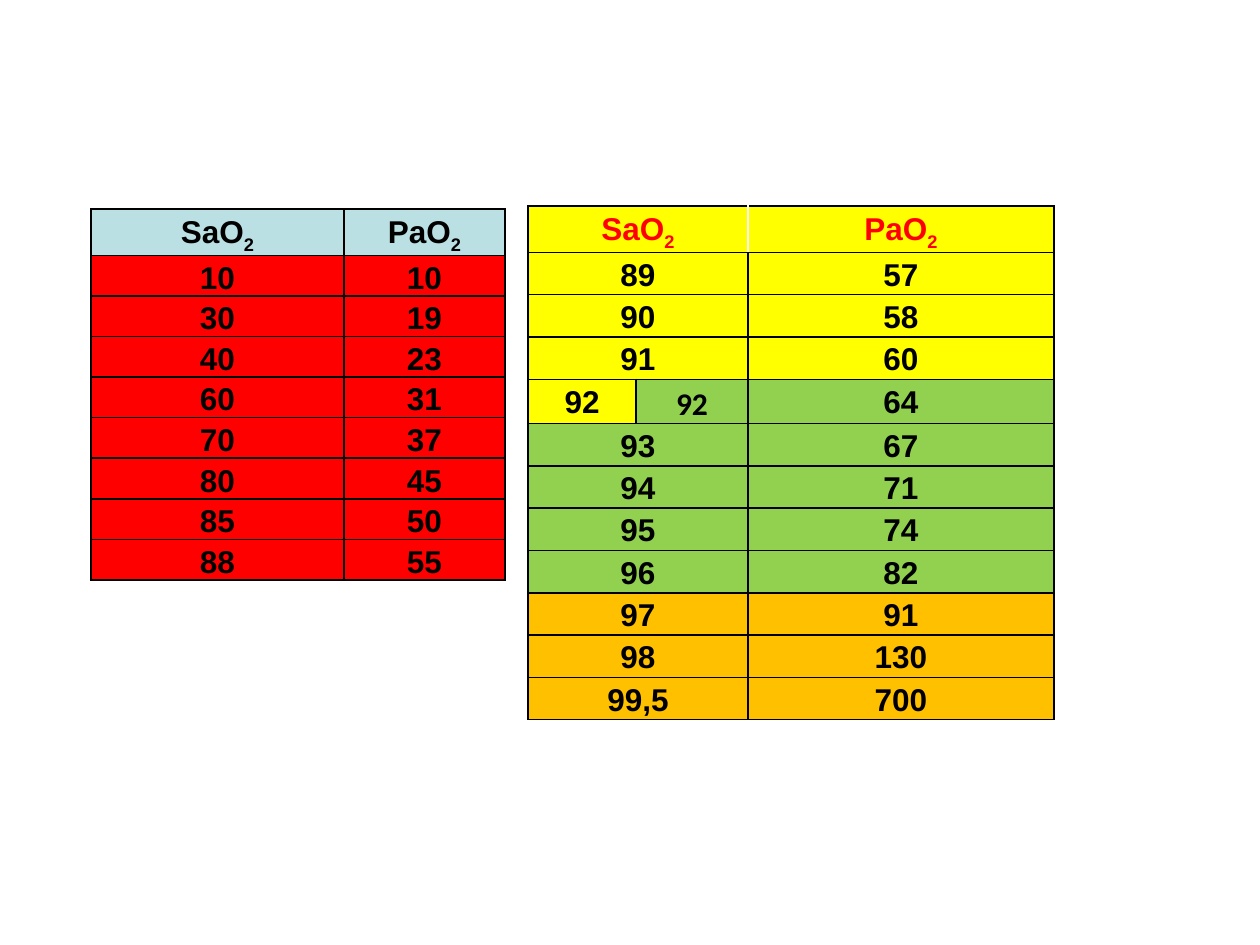
from dataclasses import dataclass
from lxml.etree import SubElement
from pptx import Presentation
from pptx.dml.color import RGBColor
from pptx.enum.text import PP_ALIGN
from pptx.oxml.ns import qn
from pptx.slide import Slide
from pptx.util import Pt

PX = 914400 / 126
RED, YELLOW, GREEN, ORANGE, BLUE = "FF0000", "FFFF00", "92D050", "FFC000", "BBE0E3"
BLACK, WHITE = "000000", "FFFFFF"


def emu(px):
    return round(px * PX)


def rgb(color):
    return RGBColor.from_string(color)


@dataclass
class SaturationSlide:
    """Draws saturation tables on one slide in a shared style."""
    slide: Slide
    font: str = "Arial"
    size: int = 18

    def run(self, p, text, color, font=None, subscript=False):
        r = p.add_run()
        r.text = text
        r.font.name = font or self.font
        r.font.size = Pt(self.size)
        r.font.bold = True
        r.font.color.rgb = rgb(color)
        if subscript:
            r._r.get_or_add_rPr().set("baseline", "-25000")

    def borders(self, cell, left, right):
        tc_pr = cell._tc.get_or_add_tcPr()
        for side, color in zip("LRTB", (left, right, BLACK, BLACK)):
            ln = SubElement(tc_pr, qn(f"a:ln{side}"), w=str(Pt(1)))
            fill = SubElement(ln, qn("a:solidFill"))
            SubElement(fill, qn("a:srgbClr"), val=color)

    def cell(self, cell, fill, left=BLACK, right=BLACK):
        self.borders(cell, left, right)
        cell.fill.solid()
        cell.fill.fore_color.rgb = rgb(fill)
        cell.margin_left = cell.margin_right = emu(8)
        cell.margin_top = cell.margin_bottom = 0
        p = cell.text_frame.paragraphs[0]
        p.alignment = PP_ALIGN.CENTER
        p.line_spacing = 1.15
        return p

    def table(self, left, top, widths, header_height, body_height, rows,
              header_fill, header_color=BLACK, divider=BLACK):
        last = len(widths) - 1
        frame = self.slide.shapes.add_table(
            len(rows) + 1, len(widths), emu(left), emu(top),
            emu(sum(widths)), emu(header_height + body_height))
        table = frame.table
        table.first_row = table.horz_banding = False
        for column, width in zip(table.columns, widths):
            column.width = emu(width)
        for i, row in enumerate(table.rows):
            row.height = emu(body_height / len(rows) if i else header_height)
        for j in range(last + 1):
            p = self.cell(table.cell(0, j), header_fill,
                          divider if j else BLACK, BLACK if j == last else divider)
            if j in (0, last):
                self.run(p, "PaO" if j else "SaO", header_color)
                self.run(p, "2", header_color, subscript=True)
        if last > 1:
            table.cell(0, 0).merge(table.cell(0, last - 1))
        for i, (fills, *values) in enumerate(rows, 1):
            split = len(values) == len(widths)
            columns = range(last + 1) if split else (0, last)
            for j in range(last + 1):
                p = self.cell(table.cell(i, j), fills[min(j, len(fills) - 1)])
                if j in columns:
                    font = "Calibri" if 0 < j < last else None
                    self.run(p, values[columns.index(j)], BLACK, font)
            if not split:
                table.cell(i, 0).merge(table.cell(i, last - 1))


def main():
    prs = Presentation()
    prs.slide_width, prs.slide_height = emu(1260), emu(945)
    s = SaturationSlide(prs.slides.add_slide(prs.slide_layouts[6]))
    normal = [
        ([YELLOW], "89", "57"), ([YELLOW], "90", "58"), ([YELLOW], "91", "60"),
        ([YELLOW, GREEN], "92", "92", "64"),
        ([GREEN], "93", "67"), ([GREEN], "94", "71"),
        ([GREEN], "95", "74"), ([GREEN], "96", "82"),
        ([ORANGE], "97", "91"), ([ORANGE], "98", "130"), ([ORANGE], "99,5", "700"),
    ]
    critical = [([RED], sao, pao) for sao, pao in (
        ("10", "10"), ("30", "19"), ("40", "23"), ("60", "31"),
        ("70", "37"), ("80", "45"), ("85", "50"), ("88", "55"))]
    s.table(528, 206, (108, 112, 306), 46, 466, normal, YELLOW, RED, WHITE)
    s.table(91, 209, (253, 161), 46, 325, critical, BLUE)
    prs.save("out.pptx")


if __name__ == "__main__":
    main()
